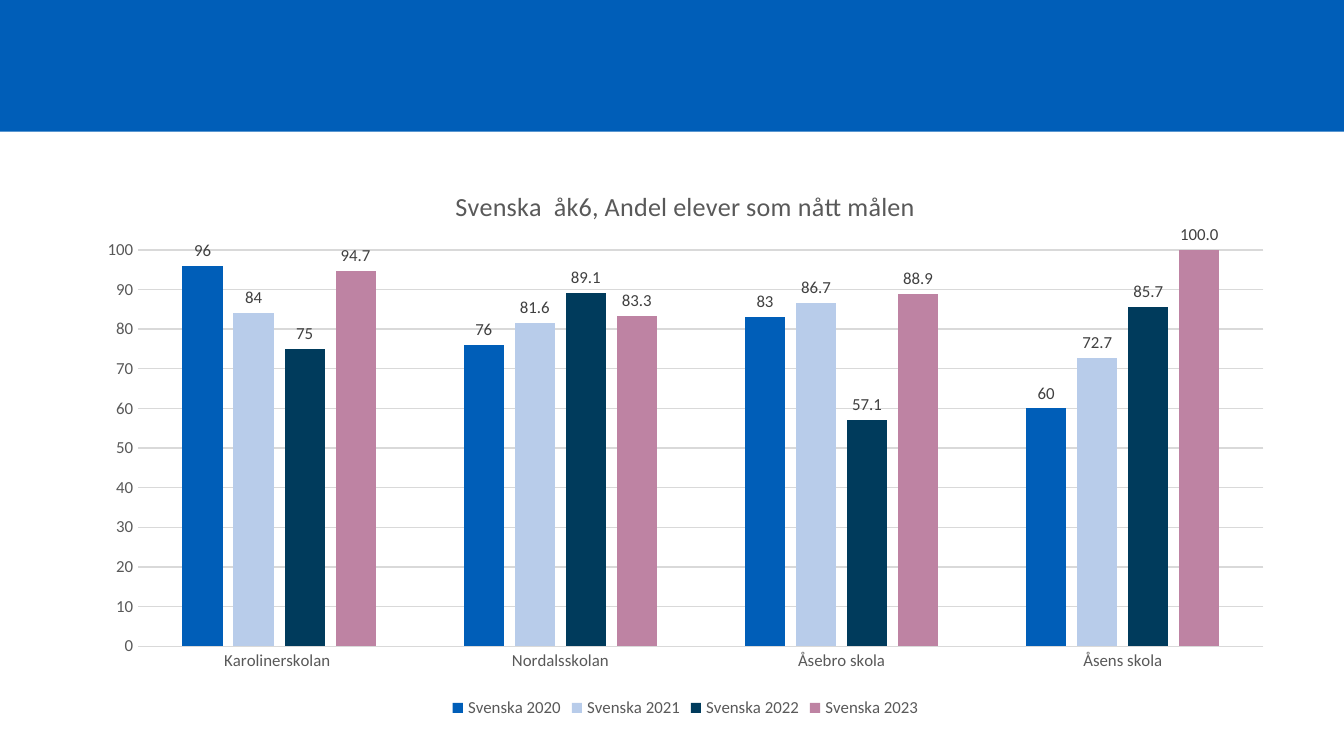
from pptx import Presentation
from pptx.chart.data import CategoryChartData as Data
from pptx.dml.color import RGBColor as Rgb
from pptx.enum.chart import XL_CHART_TYPE as Kind
from pptx.enum.chart import XL_LABEL_POSITION as Place
from pptx.enum.chart import XL_LEGEND_POSITION as Side
from pptx.enum.chart import XL_TICK_MARK as Tick
from pptx.enum.shapes import MSO_SHAPE as Shape
from pptx.oxml import parse_xml
from pptx.oxml.ns import nsdecls, qn
from pptx.util import Inches, Pt

HUES = {"blue": "005EB8", "pale": "B8CCEA", "navy": "003B5C", "rose": "BE83A3",
        "grid": "D9D9D9", "text": "595959", "label": "404040", "black": "000000"}
SCHOOLS = ["Karolinerskolan ", "Nordalsskolan", "Åsebro skola", "Åsens skola"]
YEARS = [
    ("Svenska 2020", "blue", "General", (96, 76, 83, 60)),
    ("Svenska 2021", "pale", "General", (84, 81.6, 86.7, 72.7)),
    ("Svenska 2022", "navy", "General", (75, 89.1, 57.1, 85.7)),
    ("Svenska 2023", "rose", "0.0", (94.7, 83.3, 88.9, 100)),
]


class Deck:
    """Hold the style and the current slide."""

    def __init__(self):
        self.prs = Presentation()
        wide = Inches(10)
        self.put(self.prs, slide_width=wide, slide_height=wide * 9 // 16)
        self.slide = self.prs.slides.add_slide(self.prs.slide_layouts[6])

    def put(self, item, **vals):
        for key, val in vals.items():
            setattr(item, key, val)

    def font(self, font, size, hue):
        self.put(font, name="Calibri", size=Pt(size), bold=False)
        font.color.rgb = Rgb.from_string(HUES[hue])

    def fill(self, item, hue):
        item.fill.solid()
        item.fill.fore_color.rgb = Rgb.from_string(HUES[hue])

    def line(self, line, hue):
        line.color.rgb = Rgb.from_string(HUES[hue])
        line.width = Pt(0.75)

    def band(self, box, hue):
        bar = self.slide.shapes.add_shape(Shape.RECTANGLE, *map(Inches, box))
        bar.shadow.inherit = False
        self.fill(bar, hue)
        bar.line.fill.background()

    def chart(self, box, plot, title, cats, rows):
        data = Data()
        data.categories = cats
        for name, _, _, vals in rows:
            data.add_series(name, vals)
        frame = self.slide.shapes.add_chart(
            Kind.COLUMN_CLUSTERED, *map(Inches, box), data)
        chart = frame.chart
        self.font(chart.font, 10, "black")
        chart.has_title = True
        text = chart.chart_title.text_frame
        text.text = title
        self.font(text.paragraphs[0].runs[0].font, 14, "text")
        chart.chart_title.include_in_layout = False
        self.axes(chart)
        self.bars(chart.plots[0], rows)
        chart.has_legend = True
        self.put(chart.legend, position=Side.BOTTOM, include_in_layout=False)
        self.font(chart.legend.font, 9, "text")
        self.area(chart, box, plot)

    def axes(self, chart):
        cat, val = chart.category_axis, chart.value_axis
        for axis in (cat, val):
            self.put(axis, major_tick_mark=Tick.NONE, minor_tick_mark=Tick.NONE)
            self.font(axis.tick_labels.font, 9, "text")
        self.line(cat.format.line, "grid")
        self.put(val, minimum_scale=0, maximum_scale=100, major_unit=10,
                 has_major_gridlines=True)
        val.format.line.fill.background()
        self.line(val.major_gridlines.format.line, "grid")

    def bars(self, plot, rows):
        self.put(plot, gap_width=219, overlap=-27, vary_by_categories=False)
        for bar, (_, hue, form, _) in zip(plot.series, rows):
            self.fill(bar.format, hue)
            bar.invert_if_negative = False
            self.put(bar.data_labels, show_value=True, position=Place.OUTSIDE_END,
                     number_format=form, number_format_is_linked=False)
            self.font(bar.data_labels.font, 9, "label")

    def area(self, chart, box, plot):
        left, top, wide, high = box
        x, y, w, h = plot
        part = {"x": (x - left) / wide, "y": (y - top) / high,
                "w": w / wide, "h": h / high}
        spots = "".join(f'<c:{key} val="{val:.4f}"/>' for key, val in part.items())
        area = chart._chartSpace.find(".//" + qn("c:plotArea"))
        for old in area.findall(qn("c:layout")):
            area.remove(old)
        area.insert(0, parse_xml(
            f'<c:layout {nsdecls("c")}><c:manualLayout><c:layoutTarget val="inner"/>'
            f'<c:xMode val="edge"/><c:yMode val="edge"/>{spots}'
            '</c:manualLayout></c:layout>'))


def main():
    deck = Deck()
    deck.band((0, 0, 10, 0.98), "blue")
    deck.chart((0.62, 1.23, 8.96, 4.15), (1.03, 1.86, 8.37, 2.95),
               "Svenska  åk6, Andel elever som nått målen", SCHOOLS, YEARS)
    deck.prs.save("out.pptx")


if __name__ == "__main__":
    main()
